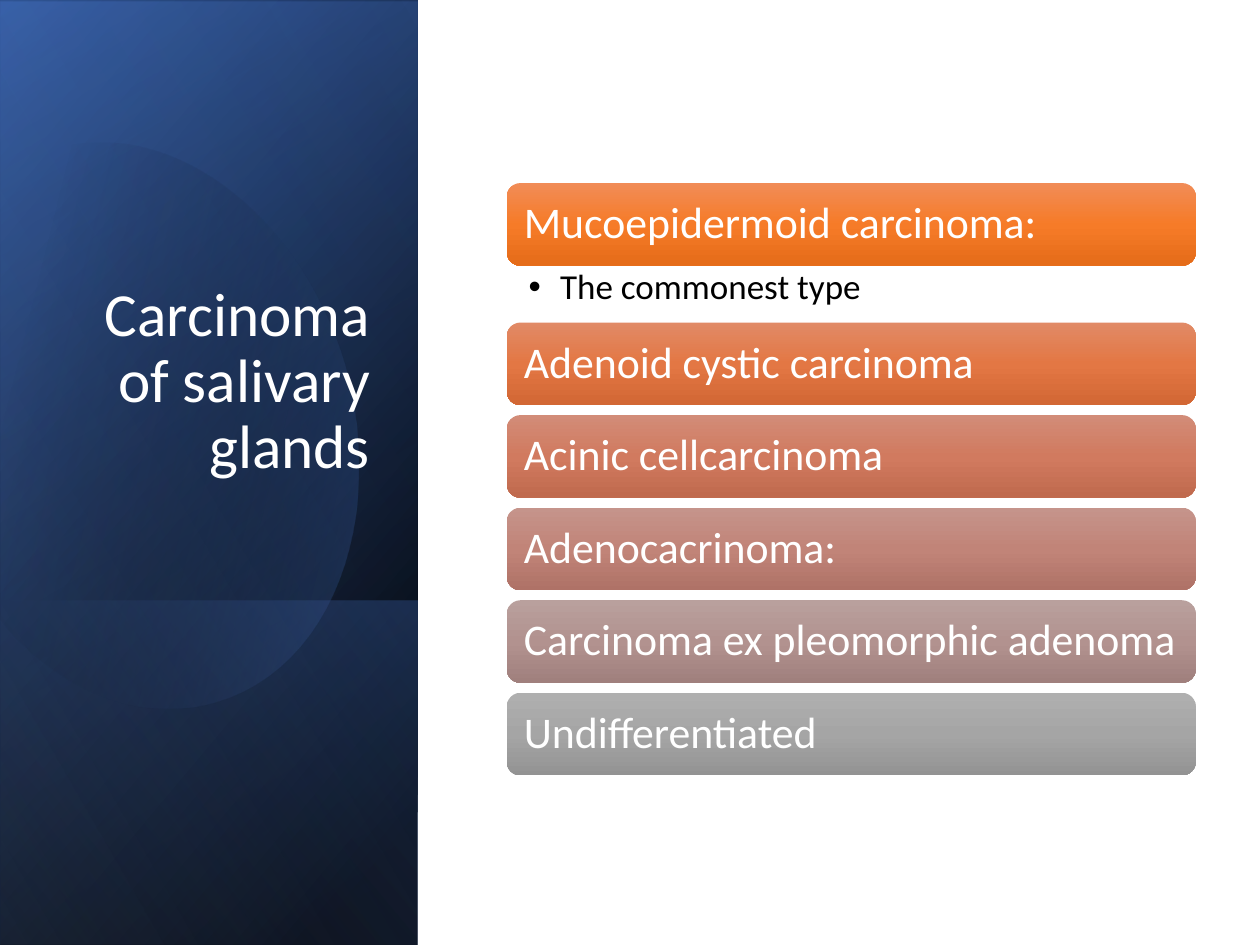
from math import cos, radians, sin
from lxml.etree import SubElement
from pptx import Presentation
from pptx.dml.color import RGBColor
from pptx.enum.shapes import MSO_SHAPE
from pptx.enum.text import MSO_ANCHOR, MSO_AUTO_SIZE, PP_ALIGN
from pptx.oxml.ns import qn
from pptx.util import Pt


def write(shape, text, size=25, color="FFFFFF", align=PP_ALIGN.LEFT,
          anchor=MSO_ANCHOR.MIDDLE, insets=(7.5, 7.2, 6, 7.2), bullet=None):
    frame = shape.text_frame
    frame.word_wrap = True
    frame.auto_size = MSO_AUTO_SIZE.NONE
    frame.vertical_anchor = anchor
    (frame.margin_left, frame.margin_top,
     frame.margin_right, frame.margin_bottom) = map(Pt, insets)
    paragraph = frame.paragraphs[0]
    paragraph.alignment = align
    paragraph.line_spacing = 0.9
    run = paragraph.add_run()
    run.text = text
    run.font.name = "Calibri"
    run.font.size = Pt(size)
    run.font.color.rgb = RGBColor.from_string(color)
    if bullet:
        properties = paragraph._p.get_or_add_pPr()
        properties.set("marL", str(Pt(18)))
        properties.set("indent", str(-Pt(18)))
        SubElement(properties, qn("a:buFont"), typeface="Arial")
        SubElement(properties, qn("a:buChar"), char=bullet)


def paint(shape, stops, angle):
    """Fill with a linear gradient; stops are (position %, colour, opacity %)."""
    shape.shadow.inherit = False
    shape.line.fill.background()
    shape.fill.gradient()
    gradient = shape.element.spPr.find(qn("a:gradFill"))
    gradient.set("rotWithShape", "1")
    for child in list(gradient):
        gradient.remove(child)
    stop_list = SubElement(gradient, qn("a:gsLst"))
    for position, color, opacity in stops:
        stop = SubElement(stop_list, qn("a:gs"), pos=str(position * 1000))
        rgb = SubElement(stop, qn("a:srgbClr"), val=color)
        if opacity < 100:
            SubElement(rgb, qn("a:alpha"), val=str(opacity * 1000))
    SubElement(gradient, qn("a:lin"), ang=str(angle * 60000), scaled="0")


prs = Presentation()
prs.slide_width, prs.slide_height = Pt(720), Pt(540)
slide = prs.slides.add_slide(prs.slide_layouts[5])
shapes = slide.shapes

# Side panel: layered gradients, each turned a quarter and mirrored
panel_layers = [
    (-150.5, 150.5, 540, [(8, "000000", 100), (100, "2F5597", 100)], 50),
    (-150.5, 151.9, 540, [(0, "000000", 0), (99, "4472C4", 46)], 30),
    (20.9, 322.6, 197.3, [(2, "4472C4", 29), (100, "000000", 30)], 130),
    (-150.5, 150.5, 540, [(0, "000000", 0), (99, "8FAADC", 11)], 120),
]
for left, top, width, stops, angle in panel_layers:
    if angle == 120:
        # Tilted oval beneath the top layer, traced from its curves
        tilt, center_x, center_y = 16.1, 85.7, 240.8
        outline = [(69, 82)]
        for curve in [
            [(123, 88), (176, 138), (197, 209)],
            [(221, 297), (189, 382), (123, 401)],
            [(82, 413), (38, 396), (5, 360)],
            [(-2, 351)], [(-18, 120)], [(-11, 111)],
            [(1, 99), (16, 90), (32, 85)],
            [(45, 81), (57, 81), (69, 82)],
        ]:
            if len(curve) == 1:
                outline += curve
                continue
            controls = [outline[-1]] + curve
            for step in range(1, 25):
                t = step / 24
                weights = ((1 - t) ** 3, 3 * t * (1 - t) ** 2,
                           3 * t * t * (1 - t), t ** 3)
                outline.append(tuple(sum(w * point[axis] for w, point in zip(weights, controls))
                                     for axis in (0, 1)))
        c, s = cos(radians(tilt)), sin(radians(tilt))
        upright = [(Pt(center_x + (x - center_x) * c - (y - center_y) * s),
                    Pt(center_y + (x - center_x) * s + (y - center_y) * c))
                   for x, y in outline]
        builder = shapes.build_freeform(*upright[0])
        builder.add_line_segments(upright[1:], close=True)
        oval = builder.convert_to_shape()
        oval.rotation = 360 - tilt
        paint(oval, [(29, "000000", 0), (100, "4472C4", 43)], 30)
    layer = shapes.add_shape(MSO_SHAPE.RECTANGLE, Pt(left), Pt(top), Pt(width), Pt(238.5))
    layer.rotation = 90
    layer.element.spPr.find(qn("a:xfrm")).set("flipH", "1")
    paint(layer, stops, angle)

# Title, brought in front of the panel
title = shapes.title
title.left, title.top, title.width, title.height = Pt(34.4), Pt(132.5), Pt(184.3), Pt(188.6)
write(title, "Carcinoma of salivary glands", size=35, align=PP_ALIGN.RIGHT,
      anchor=MSO_ANCHOR.BOTTOM, insets=(7.2, 3.6, 7.2, 45.5))
title.element.getparent().append(title.element)

# Carcinoma types, with a note under the first
list_left, list_width, bar_height, gap, note_height = 289.6, 393.8, 47.2, 5.7, 32.5
carcinomas = [
    ("Mucoepidermoid carcinoma:", "The commonest type", "F18C57", "F67B28", "E56C19"),
    ("Adenoid cystic carcinoma", None, "E18A66", "E37744", "D26734"),
    ("Acinic cellcarcinoma", None, "D28C78", "D17A5F", "C06A4E"),
    ("Adenocacrinoma:", None, "C5948B", "C18478", "AF7267"),
    ("Carcinoma ex pleomorphic adenoma", None, "B9A09D", "B2928F", "A0807D"),
    ("Undifferentiated", None, "AFAFAF", "A5A5A5", "939393"),
]
top = 104.6
for name, note, light, middle, dark in carcinomas:
    bar = shapes.add_shape(MSO_SHAPE.ROUNDED_RECTANGLE, Pt(list_left), Pt(top),
                           Pt(list_width), Pt(bar_height))
    paint(bar, [(0, light, 100), (50, middle, 100), (100, dark, 100)], 90)
    write(bar, name)
    top += bar_height
    if note:
        note_box = shapes.add_textbox(Pt(list_left), Pt(top), Pt(list_width), Pt(note_height))
        write(note_box, note, size=20, color="000000", anchor=MSO_ANCHOR.TOP,
              insets=(12.5, 2.3, 13.7, 2.3), bullet="•")
        top += note_height
    else:
        top += gap

prs.save("out.pptx")
